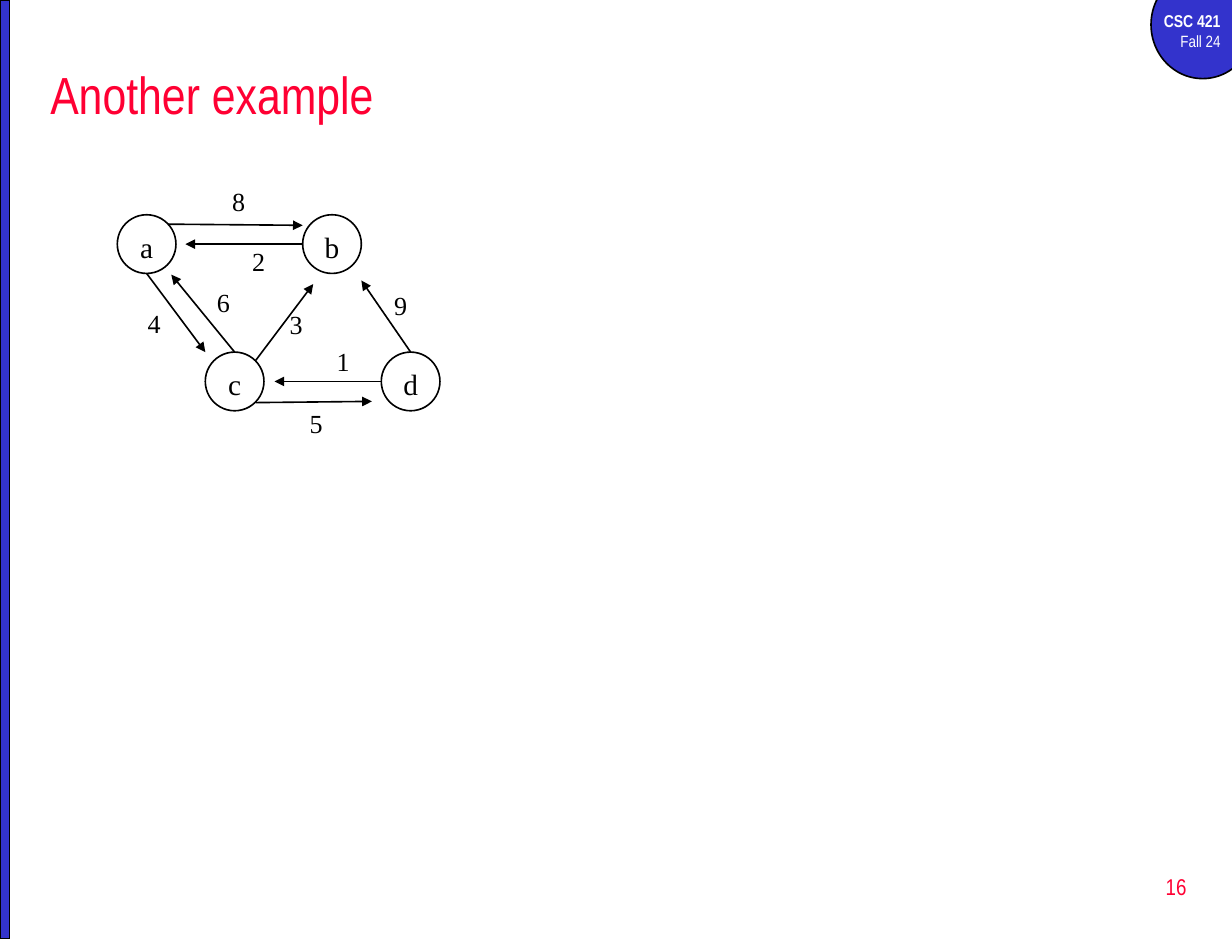
from dataclasses import dataclass

from lxml import etree
from pptx import Presentation
from pptx.dml.color import RGBColor
from pptx.enum.shapes import MSO_CONNECTOR, MSO_SHAPE
from pptx.enum.text import MSO_ANCHOR, PP_ALIGN
from pptx.oxml.ns import qn
from pptx.slide import Slide
from pptx.util import Pt

OVAL, RECTANGLE = MSO_SHAPE.OVAL, MSO_SHAPE.RECTANGLE
STRAIGHT = MSO_CONNECTOR.STRAIGHT
TOP, MIDDLE = MSO_ANCHOR.TOP, MSO_ANCHOR.MIDDLE
LEFT, CENTER, RIGHT = PP_ALIGN.LEFT, PP_ALIGN.CENTER, PP_ALIGN.RIGHT
BLACK = RGBColor(0x00, 0x00, 0x00)
WHITE = RGBColor(0xFF, 0xFF, 0xFF)
BLUE = RGBColor(0x33, 0x33, 0xCC)
RED = RGBColor(0xFF, 0x00, 0x33)
PX = 9144
NODE_SIZE = 50
LABEL_WIDTH, LABEL_HEIGHT = 29, 37

NODES = {"a": (100, 183), "b": (258, 183), "c": (175, 300), "d": (325, 300)}
EDGES = [
    ((125, 233), (175, 300), "4", (116, 257)),
    ((200, 300), (146, 234), "6", (175, 239)),
    ((143, 191), (258, 192), "8", (188, 153)),
    ((258, 208), (158, 208), "2", (205, 204)),
    ((218, 307), (267, 242), "3", (237, 258)),
    ((218, 343), (317, 342), "5", (254, 342)),
    ((325, 325), (234, 325), "1", (277, 289)),
    ((350, 300), (308, 239), "9", (326, 242)),
]


@dataclass
class GraphSlide:
    """Draws styled elements on one slide, with lengths in px."""

    slide: Slide
    heading_font: str = "Arial Narrow"
    graph_font: str = "Times New Roman"
    line_width: int = 1

    def fill_text(self, text_frame, text, font_name, size, color, align):
        text_frame.text = text
        for paragraph in text_frame.paragraphs:
            paragraph.alignment = align
            for run in paragraph.runs:
                run.font.name = font_name
                run.font.size = Pt(size)
                run.font.color.rgb = color

    def shape(self, kind, left, top, width, height, fill=None):
        shape = self.slide.shapes.add_shape(
            kind, left * PX, top * PX, width * PX, height * PX)
        shape.shadow.inherit = False
        if fill is None:
            shape.fill.background()
        else:
            shape.fill.solid()
            shape.fill.fore_color.rgb = fill
        shape.line.color.rgb = BLACK
        shape.line.width = Pt(self.line_width)
        return shape

    def text(self, left, top, width, height, text, font_name, size,
             color=BLACK, align=LEFT, anchor=TOP):
        box = self.slide.shapes.add_textbox(
            left * PX, top * PX, width * PX, height * PX)
        box.text_frame.word_wrap = True
        box.text_frame.vertical_anchor = anchor
        self.fill_text(box.text_frame, text, font_name, size, color, align)
        return box

    def heading(self, left, top, width, height, text, size,
                color=RED, align=LEFT, anchor=MIDDLE):
        return self.text(left, top, width, height, text, self.heading_font,
                         size, color, align, anchor)

    def node(self, name, left, top):
        circle = self.shape(OVAL, left, top, NODE_SIZE, NODE_SIZE)
        circle.text_frame.vertical_anchor = TOP
        self.fill_text(circle.text_frame, name, self.graph_font, 18,
                       BLACK, CENTER)

    def arrow(self, start, end):
        points = [value * PX for value in (*start, *end)]
        connector = self.slide.shapes.add_connector(STRAIGHT, *points)
        connector.line.color.rgb = BLACK
        connector.line.width = Pt(self.line_width)
        properties = connector._element.spPr
        line = properties.find(qn("a:ln"))
        etree.SubElement(line, qn("a:tailEnd"), type="triangle")
        etree.SubElement(properties, qn("a:effectLst"))

    def weight(self, text, left, top):
        self.text(left, top, LABEL_WIDTH, LABEL_HEIGHT, text,
                  self.graph_font, 16)


def main():
    presentation = Presentation()
    presentation.slide_width = 1050 * PX
    presentation.slide_height = 800 * PX
    blank = presentation.slide_layouts[6]
    graph = GraphSlide(presentation.slides.add_slide(blank))

    graph.shape(OVAL, 981, -25, 88, 92, BLUE)
    course = graph.heading(967, 4, 83, 46, "CSC 421\nFall 24", 10,
                           WHITE, RIGHT, TOP)
    course_run = course.text_frame.paragraphs[0].runs[0]
    course_run.font.size = Pt(10.5)
    course_run.font.bold = True
    graph.shape(RECTANGLE, 0, 0, 8, 800, BLUE)
    graph.heading(33, 42, 992, 75, "Another example", 32)
    graph.heading(802, 729, 219, 53, "16", 14, align=RIGHT)

    for name, position in NODES.items():
        graph.node(name, *position)
    for start, end, weight, position in EDGES:
        graph.arrow(start, end)
        graph.weight(weight, *position)

    presentation.save("out.pptx")


if __name__ == "__main__":
    main()
